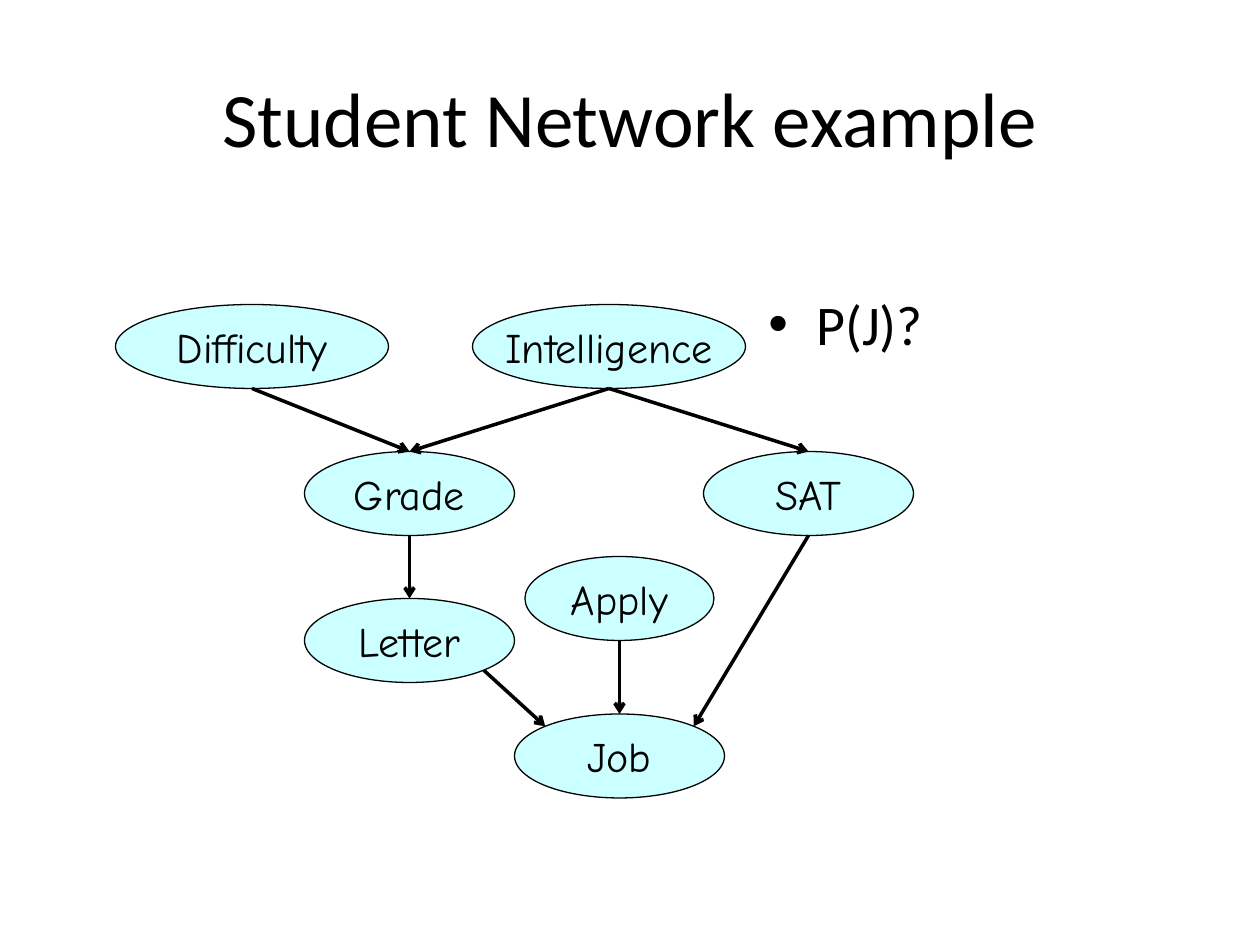
import math

import pptx
import pptx.dml.color
import pptx.enum.shapes
import pptx.enum.text
import pptx.oxml.ns
import pptx.util
from lxml import etree

COLORS = {"ink": "000000", "node": "CCFFFF", "page": "FFFFFF"}
COLUMNS, ROWS = 120, 90
NODE_HEIGHT = 8
ANGLES = {"top": -90, "top right": -45, "bottom right": 45, "bottom": 90, "top left": -135}

NODES = {
    "Intelligence": (45, 29, 26),
    "Difficulty": (11, 29, 26),
    "Grade": (29, 43, 20),
    "Letter": (29, 57, 20),
    "SAT": (67, 43, 20),
    "Job": (49, 68, 20),
    "Apply": (50, 53, 18),
}
EDGES = [
    ("Difficulty", "bottom", "Grade", "top"),
    ("Intelligence", "bottom", "Grade", "top"),
    ("Intelligence", "bottom", "SAT", "top"),
    ("Grade", "bottom", "Letter", "top"),
    ("SAT", "bottom", "Job", "top right"),
    ("Letter", "bottom right", "Job", "top left"),
    ("Apply", "bottom", "Job", "top"),
]


def color(name):
    return pptx.dml.color.RGBColor.from_string(COLORS[name])


def add_element(parent, tag, **attributes):
    return etree.SubElement(parent, pptx.oxml.ns.qn(tag), attributes)


class NetworkSlide:
    heading_font = "Calibri"
    node_font = "Comic Neue"

    def __init__(self, deck):
        self.page = deck.slides.add_slide(deck.slide_layouts[6])
        self.page.background.fill.solid()
        self.page.background.fill.fore_color.rgb = color("page")
        self.cell_width = deck.slide_width / COLUMNS
        self.cell_height = deck.slide_height / ROWS

    def place(self, column, row, width, height):
        return (
            round(column * self.cell_width),
            round(row * self.cell_height),
            round(width * self.cell_width),
            round(height * self.cell_height),
        )

    def set_text(self, frame, text, font, size, align):
        paragraph = frame.paragraphs[0]
        paragraph.text = text
        paragraph.alignment = align
        paragraph.font.name = font
        paragraph.font.size = pptx.util.Pt(size)
        paragraph.font.color.rgb = color("ink")

    def title(self, text, *area):
        frame = self.page.shapes.add_textbox(*self.place(*area)).text_frame
        frame.word_wrap = True
        frame.vertical_anchor = pptx.enum.text.MSO_ANCHOR.MIDDLE
        self.set_text(frame, text, self.heading_font, 44, pptx.enum.text.PP_ALIGN.CENTER)

    def bullet(self, text, *area):
        frame = self.page.shapes.add_textbox(*self.place(*area)).text_frame
        frame.word_wrap = True
        properties = frame.paragraphs[0]._p.get_or_add_pPr()
        indent = pptx.util.Inches(0.38)
        properties.set("marL", str(indent))
        properties.set("indent", str(-indent))
        add_element(properties, "a:buFont", typeface="Arial")
        add_element(properties, "a:buChar", char="•")
        self.set_text(frame, text, self.heading_font, 32, pptx.enum.text.PP_ALIGN.LEFT)

    def node(self, text, column, row, width):
        oval = self.page.shapes.add_shape(
            pptx.enum.shapes.MSO_SHAPE.OVAL, *self.place(column, row, width, NODE_HEIGHT)
        )
        oval.shadow.inherit = False
        oval.fill.solid()
        oval.fill.fore_color.rgb = color("node")
        oval.line.color.rgb = color("ink")
        oval.line.width = pptx.util.Pt(0.75)
        oval.text_frame.word_wrap = False
        oval.text_frame.vertical_anchor = pptx.enum.text.MSO_ANCHOR.MIDDLE
        self.set_text(oval.text_frame, text, self.node_font, 24, pptx.enum.text.PP_ALIGN.CENTER)
        return oval

    def rim(self, oval, side):
        angle = math.radians(ANGLES[side])
        return (
            round(oval.left + oval.width / 2 * (1 + math.cos(angle))),
            round(oval.top + oval.height / 2 * (1 + math.sin(angle))),
        )

    def arrow(self, source, source_side, target, target_side):
        connector = self.page.shapes.add_connector(
            pptx.enum.shapes.MSO_CONNECTOR.STRAIGHT,
            *self.rim(source, source_side),
            *self.rim(target, target_side),
        )
        connector.line.color.rgb = color("ink")
        connector.line.width = pptx.util.Pt(2)
        properties = connector._element.spPr
        add_element(properties.find(pptx.oxml.ns.qn("a:ln")), "a:tailEnd", type="arrow")
        add_element(properties, "a:effectLst")


def main():
    deck = pptx.Presentation()
    deck.slide_width = pptx.util.Inches(10)
    deck.slide_height = pptx.util.Inches(7.5)
    slide = NetworkSlide(deck)
    ovals = {name: slide.node(name, *area) for name, area in NODES.items()}
    for source, source_side, target, target_side in EDGES:
        slide.arrow(ovals[source], source_side, ovals[target], target_side)
    slide.title("Student Network example", 6, 3.6, 108, 15)
    slide.bullet("P(J)?", 72, 27, 102, 54)
    deck.save("out.pptx")


if __name__ == "__main__":
    main()
